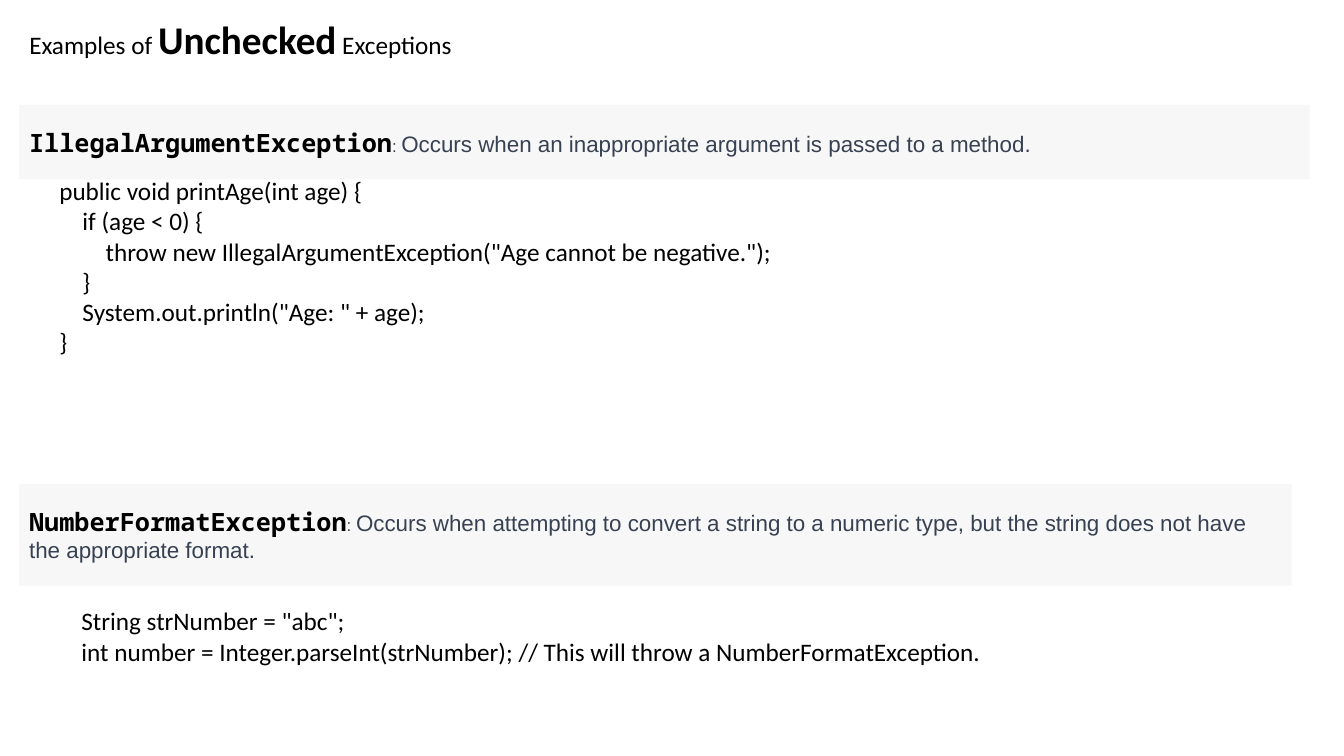
from pptx import Presentation
from pptx.dml.color import RGBColor
from pptx.enum.shapes import MSO_SHAPE
from pptx.enum.text import MSO_ANCHOR, MSO_AUTO_SIZE, PP_ALIGN
from pptx.util import Inches, Pt

RECTANGLE = MSO_SHAPE.RECTANGLE
TOP, MIDDLE = MSO_ANCHOR.TOP, MSO_ANCHOR.MIDDLE
LEFT = PP_ALIGN.LEFT
NO_AUTOFIT = MSO_AUTO_SIZE.NONE

BLACK = RGBColor(0x00, 0x00, 0x00)
SLATE = RGBColor(0x37, 0x41, 0x51)
PALE_GREY = RGBColor(0xF7, 0xF7, 0xF8)

BODY_FONT, NAME_FONT, DESCRIPTION_FONT = "Calibri", "Noto Sans Mono", "Arial"
MARGIN = 0.19
INDENT = 0.23  # one code level

# Runs: text, size, bold
TITLE = [("Examples of ", 18, False), ("Unchecked", 28, True), (" Exceptions", 18, False)]

# Boxes: left, top, width, height. Code lines: indent level, text
EXAMPLES = [
    {
        "name": "IllegalArgumentException",
        "description": "Occurs when an inappropriate argument is passed to a method.",
        "banner_box": (MARGIN, 1.04, 12.8, 0.74),
        "code_box": (0.49, 1.69, 9.46, 1.92),
        "code": [
            (0, "public void printAge(int age) {"),
            (1, "if (age < 0) {"),
            (2, 'throw new IllegalArgumentException("Age cannot be negative.");'),
            (1, "}"),
            (1, 'System.out.println("Age: " + age);'),
            (0, "}"),
        ],
    },
    {
        "name": "NumberFormatException",
        "description": "Occurs when attempting to convert a string to a numeric type, "
                       "but the string does not have the appropriate format.",
        "banner_box": (MARGIN, 4.8, 12.62, 1.01),
        "code_box": (0.71, 5.96, 9.6, 0.71),
        "code": [
            (0, 'String strNumber = "abc";'),
            (0, "int number = Integer.parseInt(strNumber); "
                "// This will throw a NumberFormatException."),
        ],
    },
]


def add_run(paragraph, text, size, font=BODY_FONT, color=BLACK, bold=False):
    run = paragraph.add_run()
    run.text = text
    run.font.name = font
    run.font.size = Pt(size)
    run.font.bold = bold
    run.font.color.rgb = color


def add_title(slide):
    title = slide.shapes.title
    title.left, title.top = Inches(MARGIN), Inches(0.1)
    title.width, title.height = Inches(4.44), Inches(0.57)
    frame = title.text_frame
    frame.auto_size = NO_AUTOFIT
    frame.word_wrap = False
    frame.vertical_anchor = TOP
    paragraph = frame.paragraphs[0]
    paragraph.alignment = LEFT
    for text, size, bold in TITLE:
        add_run(paragraph, text, size, bold=bold)


def add_banner(slide, example):
    banner = slide.shapes.add_shape(RECTANGLE, *map(Inches, example["banner_box"]))
    banner.shadow.inherit = False
    banner.fill.solid()
    banner.fill.fore_color.rgb = PALE_GREY
    banner.line.fill.background()
    frame = banner.text_frame
    frame.word_wrap = True
    frame.vertical_anchor = MIDDLE
    frame.margin_left = frame.margin_right = Inches(0.1)
    frame.margin_top = frame.margin_bottom = Inches(0.22)
    paragraph = frame.paragraphs[0]
    paragraph.alignment = LEFT
    add_run(paragraph, example["name"], 18, NAME_FONT, bold=True)
    add_run(paragraph, ": ", 12, DESCRIPTION_FONT, SLATE)
    add_run(paragraph, example["description"], 16, DESCRIPTION_FONT, SLATE)


def add_code(slide, example):
    frame = slide.shapes.add_textbox(*map(Inches, example["code_box"])).text_frame
    frame.word_wrap = True
    for index, (level, line) in enumerate(example["code"]):
        paragraph = frame.add_paragraph() if index else frame.paragraphs[0]
        paragraph_format = paragraph._p.get_or_add_pPr()
        paragraph_format.set("marL", str(Inches(INDENT * level)))
        paragraph_format.set("indent", "0")
        add_run(paragraph, line, 18)


def main():
    presentation = Presentation()
    presentation.slide_width, presentation.slide_height = Inches(13.33), Inches(7.5)
    title_only = presentation.slide_layouts[5]
    slide = presentation.slides.add_slide(title_only)
    add_title(slide)
    for example in EXAMPLES:
        add_banner(slide, example)
        add_code(slide, example)
    presentation.save("out.pptx")


if __name__ == "__main__":
    main()
